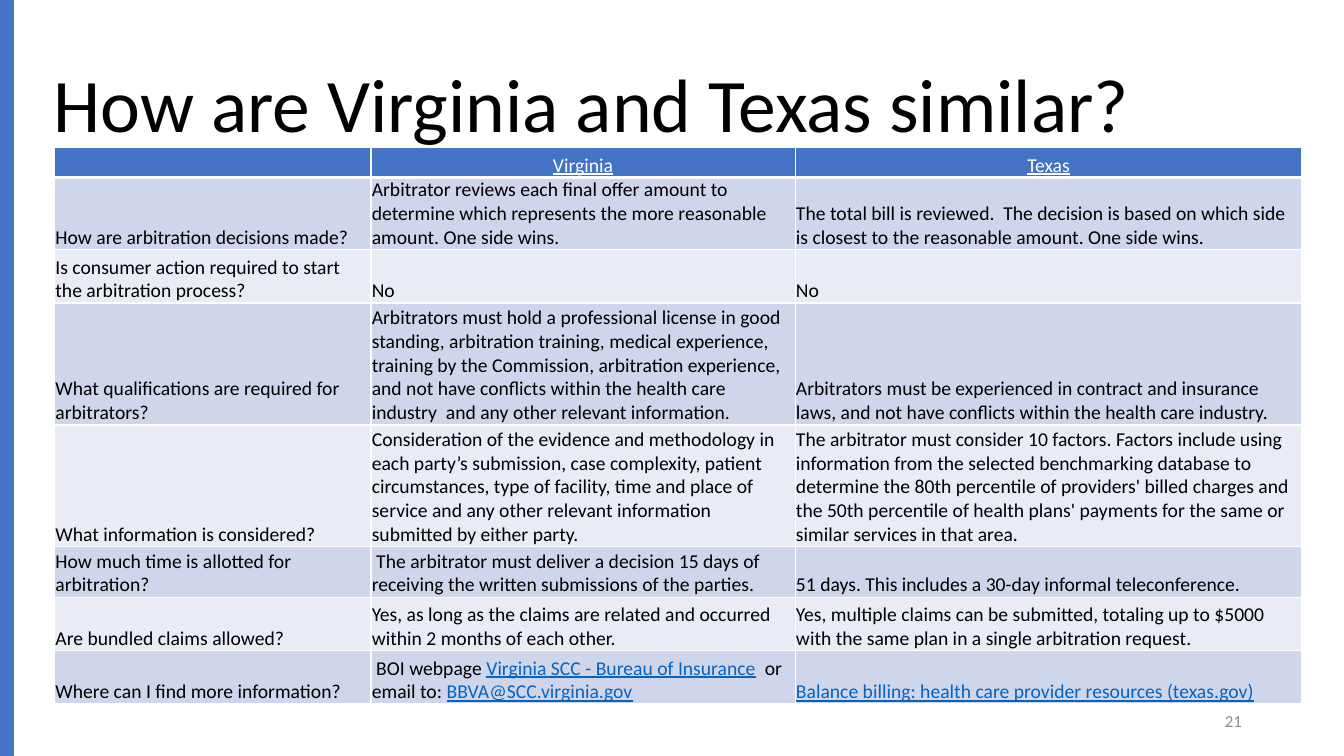
import pptx
import pptx.util
import pptx.dml.color
import pptx.enum.shapes
import pptx.enum.text
import pptx.oxml
import pptx.oxml.ns

Pt = pptx.util.Pt
ALIGN = pptx.enum.text.PP_ALIGN
ANCHOR = pptx.enum.text.MSO_ANCHOR
COLORS = {
    "accent": "4472C4",
    "band_dark": "CFD5EA",
    "band_light": "E9EBF5",
    "text": "000000",
    "white": "FFFFFF",
    "link": "0563C1",
    "number": "8C8C8C",
}
COLUMN_WIDTHS = [226, 303, 362]
ROW_HEIGHTS = [21.6, 51.4, 38.4, 87.1, 87.1, 35.9, 38.2, 38.2]
LINK_MARK = "|"
ROWS = [
    ["", "Virginia", "Texas"],
    [
        "How are arbitration decisions made?",
        "Arbitrator reviews each final offer amount to determine which represents the more reasonable amount. One side wins.",
        "The total bill is reviewed.  The decision is based on which side is closest to the reasonable amount. One side wins.",
    ],
    ["Is consumer action required to start the arbitration process?", "No", "No"],
    [
        "What qualifications are required for arbitrators?",
        "Arbitrators must hold a professional license in good standing, arbitration training, medical experience, training by the Commission, arbitration experience, and not have conflicts within the health care industry  and any other relevant information.",
        "Arbitrators must be experienced in contract and insurance laws, and not have conflicts within the health care industry.",
    ],
    [
        "What information is considered?",
        "Consideration of the evidence and methodology in each party’s submission, case complexity, patient circumstances, type of facility, time and place of service and any other relevant information submitted by either party.",
        "The arbitrator must consider 10 factors. Factors include using information from the selected benchmarking database to determine the 80th percentile of providers' billed charges and the 50th percentile of health plans' payments for the same or similar services in that area.",
    ],
    [
        "How much time is allotted for arbitration?",
        " The arbitrator must deliver a decision 15 days of receiving the written submissions of the parties.",
        "51 days. This includes a 30-day informal teleconference.",
    ],
    [
        "Are bundled claims allowed?",
        "Yes, as long as the claims are related and occurred within 2 months of each other.",
        "Yes, multiple claims can be submitted, totaling up to $5000 with the same plan in a single arbitration request.",
    ],
    [
        "Where can I find more information?",
        " BOI webpage |Virginia SCC - Bureau of Insurance|  or email to: |BBVA@SCC.virginia.gov",
        "|Balance billing: health care provider resources (texas.gov)",
    ],
]


def style_font(font, size, color):
    font.name = "Calibri"
    font.size = Pt(size)
    font.color.rgb = pptx.dml.color.RGBColor.from_string(COLORS[color])


def add_label(slide, box, text, size, color, alignment):
    frame = slide.shapes.add_textbox(*[Pt(length) for length in box]).text_frame
    frame.word_wrap = True
    frame.vertical_anchor = ANCHOR.MIDDLE
    paragraph = frame.paragraphs[0]
    paragraph.text = text
    paragraph.alignment = alignment
    style_font(paragraph.font, size, color)
    return paragraph


presentation = pptx.Presentation()
presentation.slide_width = Pt(960)
presentation.slide_height = Pt(540)
slide = presentation.slides.add_slide(presentation.slide_layouts[6])

title = add_label(slide, (31, 25.2, 898.6, 104.4), "How are Virginia and Texas similar?", 54, "text", ALIGN.LEFT)
title.line_spacing = 0.9

side_bar = slide.shapes.add_shape(pptx.enum.shapes.MSO_SHAPE.RECTANGLE, 0, 0, Pt(10), Pt(540))
side_bar.shadow.inherit = False
side_bar.fill.solid()
side_bar.fill.fore_color.rgb = pptx.dml.color.RGBColor.from_string(COLORS["accent"])
side_bar.line.fill.background()

table = slide.shapes.add_table(
    len(ROWS), len(COLUMN_WIDTHS), Pt(39), Pt(105.1), Pt(sum(COLUMN_WIDTHS)), Pt(sum(ROW_HEIGHTS))
).table
table.first_row = False
table.horz_banding = False
for column, width in zip(table.columns, COLUMN_WIDTHS):
    column.width = Pt(width)

for row_index, (row, height, texts) in enumerate(zip(table.rows, ROW_HEIGHTS, ROWS)):
    row.height = Pt(height)
    is_header = row_index == 0
    fill = "accent" if is_header else ("band_light", "band_dark")[row_index % 2]
    for cell, text in zip(row.cells, texts):
        cell.margin_left = cell.margin_right = cell.margin_top = Pt(0.6)
        cell.margin_bottom = 0
        cell.vertical_anchor = ANCHOR.BOTTOM
        properties = cell._tc.get_or_add_tcPr()
        for side in "LRTB":
            thick = (is_header and side == "B") or (row_index == 1 and side == "T")
            properties.append(pptx.oxml.parse_xml(
                f'<a:ln{side} {pptx.oxml.ns.nsdecls("a")} w="{Pt(3 if thick else 1)}">'
                f'<a:solidFill><a:srgbClr val="{COLORS["white"]}"/></a:solidFill></a:ln{side}>'
            ))
        cell.fill.solid()
        cell.fill.fore_color.rgb = pptx.dml.color.RGBColor.from_string(COLORS[fill])
        paragraph = cell.text_frame.paragraphs[0]
        paragraph.alignment = ALIGN.CENTER if is_header else ALIGN.LEFT
        style_font(paragraph.font, 14, "white" if is_header else "text")
        paragraph.font.underline = is_header
        for part_index, part in enumerate(text.split(LINK_MARK)):
            if part:
                run = paragraph.add_run()
                run.text = part
                if part_index % 2:
                    style_font(run.font, 14, "link")
                    run.font.underline = True

add_label(slide, (678.2, 500.4, 216, 28.8), "21", 12, "number", ALIGN.RIGHT)

presentation.save("out.pptx")
